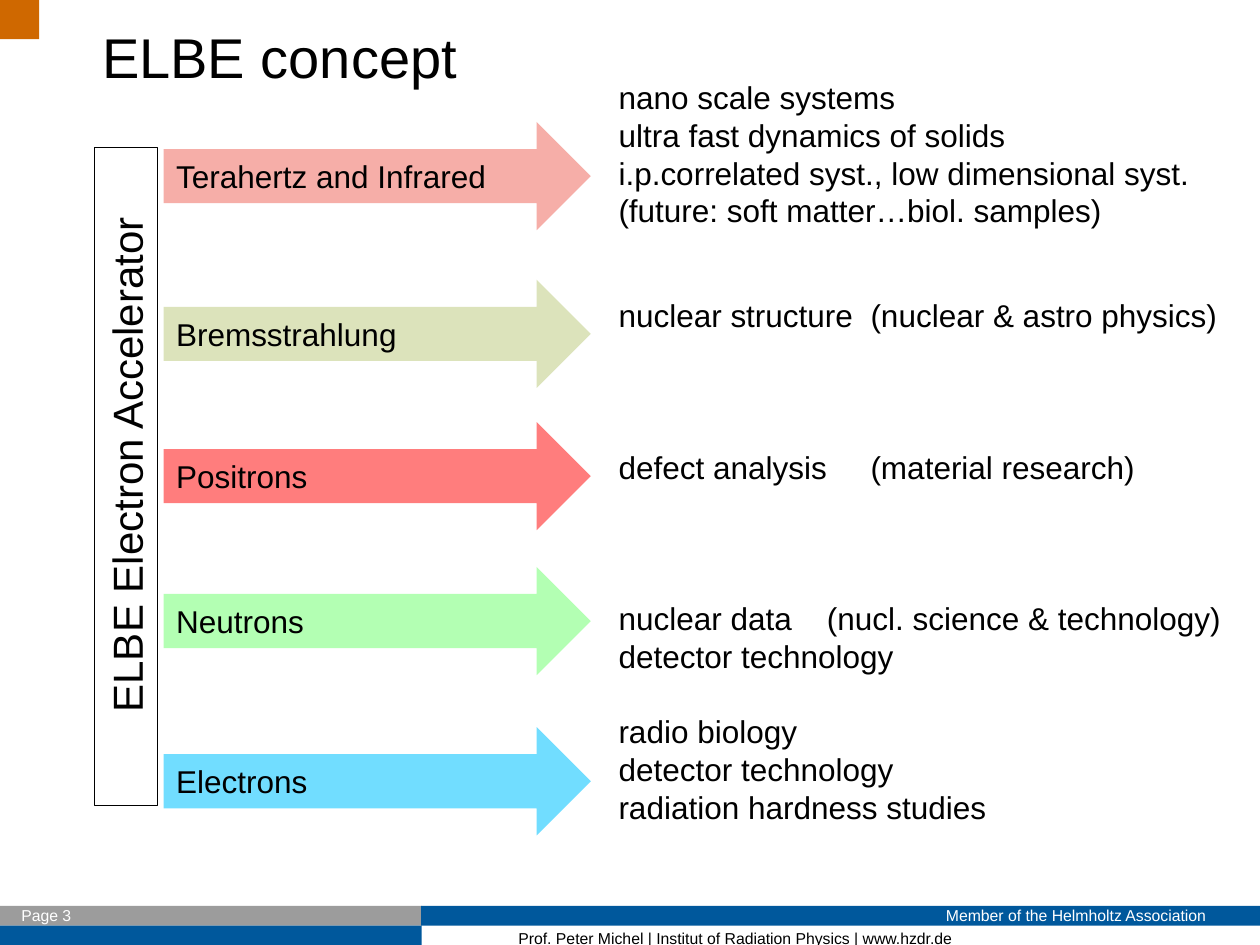
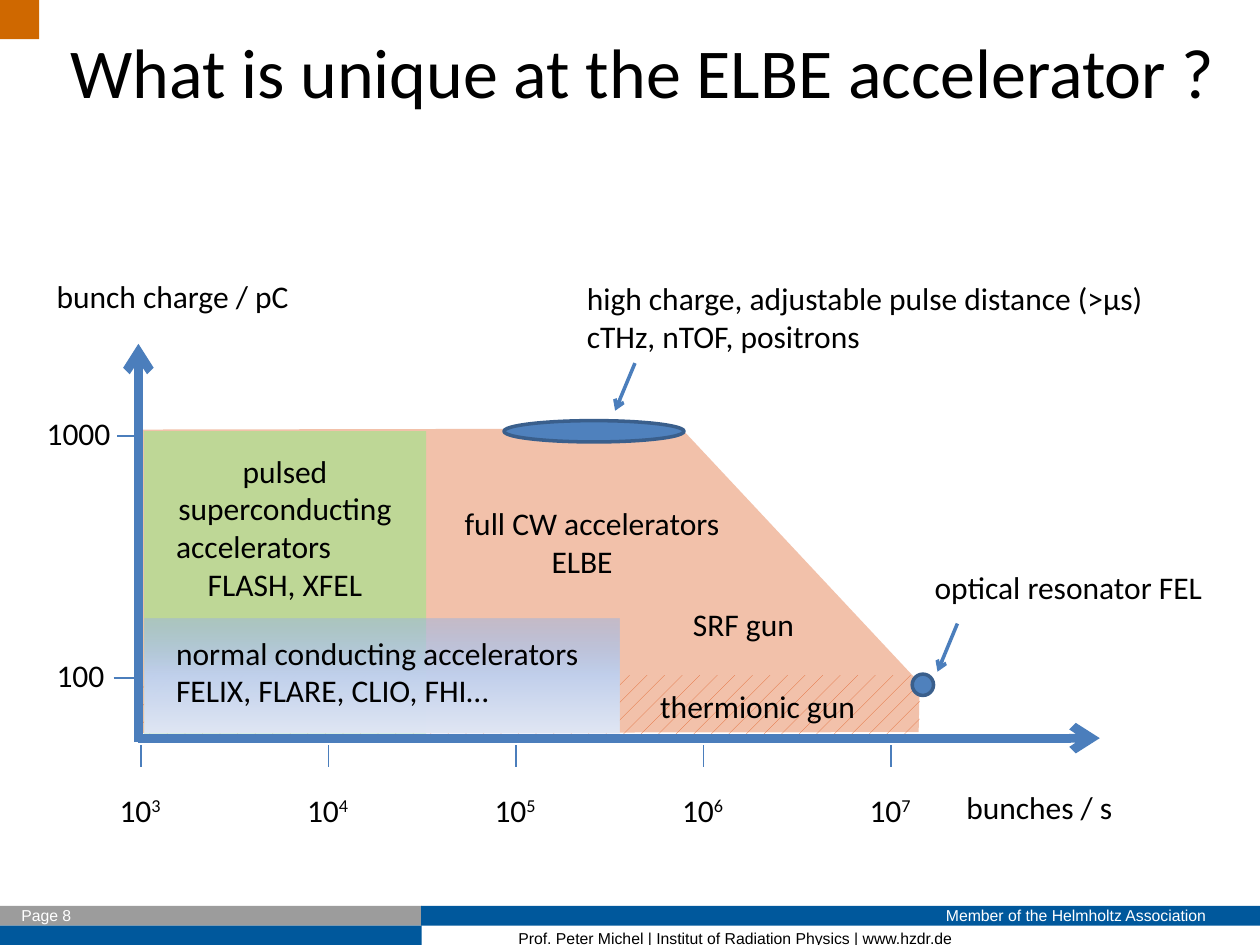
"""Build two slides on the ELBE accelerator: its beams and its operating range."""
from copy import deepcopy

from lxml.etree import SubElement
from pptx import Presentation
from pptx.dml.color import RGBColor
from pptx.enum.dml import MSO_PATTERN_TYPE as Pattern
from pptx.enum.shapes import MSO_CONNECTOR as Connector, MSO_SHAPE as Shape
from pptx.enum.text import MSO_ANCHOR as Anchor, MSO_AUTO_SIZE as AutoSize, PP_ALIGN as Align
from pptx.oxml.ns import qn
from pptx.util import Cm, Pt

ORANGE, GRAY, NAVY = "CF6800", "9C9C9C", "00589C"
BLACK, WHITE = "000000", "FFFFFF"
AXIS_BLUE, SPOT_BLUE, SPOT_EDGE, CW_ORANGE = "4B7EBC", "4F81BD", "3A5F8C", "E0642C"

ARIAL = {"name": "Arial", "size": Pt(18)}
CALIBRI = {"name": "Calibri", "size": Pt(18)}
FOOTER = {"name": "Arial", "size": Pt(9)}
BLANK_LINE = 21.6

BEAMS = [
    ("Terahertz and Infrared", 2.46, "F6AEA8", None),
    ("Bremsstrahlung", 5.64, "DCE3BB", None),
    ("Positrons", 8.51, "FF0000", 51),
    ("Neutrons", 11.43, "B3FFB3", None),
    ("Electrons", 14.66, "71DDFF", None),
]

RESEARCH_TOPICS = [
    "nano scale systems",
    "ultra fast dynamics of solids",
    "i.p.correlated syst., low dimensional syst.",
    "(future: soft matter…biol. samples)",
    ("nuclear structure\t(nuclear & astro physics)", {"space": 38.4, "tab": 5.08}),
    ("defect analysis\t(material research)", {"space": 3 * BLANK_LINE, "tab": 5.08}),
    ("nuclear data\t(nucl. science & technology)", {"space": 3 * BLANK_LINE, "tab": 4.2}),
    "detector technology",
    ("radio biology", {"space": BLANK_LINE}),
    "detector technology",
    "radiation hardness studies",
]


def rgb(color):
    """Turn a hex string into a colour."""
    return RGBColor.from_string(color)


def set_all(target, values):
    """Set each attribute in a dict on the target."""
    for name, value in values.items():
        setattr(target, name, value)


def box(*lengths):
    """Convert centimetres to lengths."""
    return [Cm(length) for length in lengths]


def set_alpha(shape, percent):
    """Set the opacity of the first colour in a shape."""
    color = next(shape._element.spPr.iter(qn("a:srgbClr")))
    SubElement(color, qn("a:alpha"), val=str(percent * 1000))


def format_paragraph(paragraph, space=0, tab=None, indent=0, align=None):
    """Apply spacing, a tab stop, an indent and an alignment."""
    properties = paragraph._p.get_or_add_pPr()
    if tab:
        tabs = SubElement(properties, qn("a:tabLst"))
        SubElement(tabs, qn("a:tab"), pos=str(Cm(tab)), algn="l")
    if indent:
        properties.set("marL", str(Cm(indent)))
    set_all(paragraph, {"space_before": Pt(space), "alignment": align})


def write(shape, lines, font, color=BLACK, align=Align.LEFT, **frame_values):
    """Fill a shape with paragraphs; a caret starts a superscript."""
    frame = shape.text_frame
    set_all(frame, {"word_wrap": True, **frame_values})
    for index, line in enumerate(lines):
        text, options = line if isinstance(line, tuple) else (line, {})
        paragraph = frame.paragraphs[0] if index == 0 else frame.add_paragraph()
        format_paragraph(paragraph, **{"align": align, **options})
        for position, part in enumerate(text.split("^")):
            run = paragraph.add_run()
            run.text = part
            set_all(run.font, font)
            run.font.color.rgb = rgb(color)
            if position:
                run._r.get_or_add_rPr().set("baseline", "30000")


def add_text(slide, place, lines, font, wrap=False, **options):
    """Add a text box."""
    text_box = slide.shapes.add_textbox(*box(*place))
    write(text_box, lines, font, word_wrap=wrap,
          auto_size=AutoSize.SHAPE_TO_FIT_TEXT, **options)


def paint(shape, fill=None, alpha=None, line=None, width=0.75):
    """Set the fill and outline of a shape and drop its shadow."""
    shape.shadow.inherit = False
    if fill:
        shape.fill.solid()
        shape.fill.fore_color.rgb = rgb(fill)
    else:
        shape.fill.background()
    if alpha:
        set_alpha(shape, alpha)
    if line:
        shape.line.color.rgb = rgb(line)
        shape.line.width = Pt(width)
    else:
        shape.line.fill.background()


def add_shape(slide, kind, place, **style):
    """Add a painted preset shape."""
    shape = slide.shapes.add_shape(kind, *box(*place))
    paint(shape, **style)
    return shape


def add_line(slide, ends, width=0.75, arrow=False):
    """Add a straight axis-blue line, with an arrowhead if wanted."""
    line = slide.shapes.add_connector(Connector.STRAIGHT, *box(*ends))
    line.line.color.rgb = rgb(AXIS_BLUE)
    line.line.width = Pt(width)
    if arrow:
        SubElement(line.line._get_or_add_ln(), qn("a:tailEnd"), type="arrow")
    SubElement(line._element.spPr, qn("a:effectLst"))


def add_frame(slide, page):
    """Draw the corner mark, footer bands and footer texts."""
    for place, color in [
        ((0, 0, 0.79, 0.79), ORANGE),
        ((0, 18.26, 8.5, 0.4), GRAY),
        ((8.49, 18.26, 16.91, 0.4), NAVY),
        ((0, 18.66, 8.5, 0.4), NAVY),
    ]:
        add_shape(slide, Shape.RECTANGLE, place, fill=color)
    add_text(slide, (18.21, 18.13, 6.35, 0.64), ["Member of the Helmholtz Association"],
             FOOTER, wrap=True, color=WHITE, align=Align.RIGHT)
    add_text(slide, (0.18, 18.13, 5.92, 0.64), [f"Page {page}"],
             FOOTER, wrap=True, color=WHITE)
    add_text(slide, (10.2, 18.6, 14.92, 0.64),
             ["Prof. Peter Michel | Institut of Radiation Physics | www.hzdr.de"],
             FOOTER, wrap=True)


def add_slide(presentation, page):
    """Add a blank slide with the shared frame."""
    slide = presentation.slides.add_slide(presentation.slide_layouts[6])
    add_frame(slide, page)
    return slide


def add_beam_arrow(slide, label, top, color, alpha):
    """Add a block arrow that names one kind of beam."""
    arrow = add_shape(slide, Shape.RIGHT_ARROW, (3.3, top, 8.61, 2.18),
                      fill=color, alpha=alpha)
    write(arrow, [label], ARIAL)


def add_cw_region(slide):
    """Add the outlined region of the continuous wave accelerators."""
    hatch = add_shape(slide, Shape.RECTANGLE, (2.79, 13.61, 15.75, 1.19))
    hatch.fill.patterned()
    hatch.fill.pattern = Pattern.PERCENT_5
    hatch.fill.fore_color.rgb = rgb(CW_ORANGE)
    hatch.fill.back_color.rgb = rgb(WHITE)

    corners = [(18.52, 14.76), (18.54, 13.77), (13.74, 8.64), (2.84, 8.66), (2.79, 14.78)]
    start, *others = [box(*corner) for corner in corners]
    builder = slide.shapes.build_freeform(*start, scale=1.0)
    builder.add_line_segments(others, close=True)
    region = builder.convert_to_shape()
    paint(region, CW_ORANGE, 40)
    write(region, [("full CW accelerators", {"indent": 2.54}), ("ELBE", {"indent": 2.14})],
          CALIBRI, align=Align.CENTER, vertical_anchor=Anchor.MIDDLE, margin_bottom=Cm(1.68))
    add_text(slide, (13.72, 12.07, 2.57, 1.02), ["SRF gun"], CALIBRI)
    add_text(slide, (13.06, 13.72, 4.5, 1.02), ["thermionic gun"], CALIBRI)


def add_pulsed_region(slide):
    """Add the region of the pulsed superconducting accelerators."""
    region = add_shape(slide, Shape.RECTANGLE, (2.9, 8.69, 5.69, 6.2),
                       fill="88EF83", alpha=49)
    lines = ["pulsed superconducting",
             ("accelerators", {"align": Align.LEFT, "indent": 0.4}),
             "FLASH, XFEL"]
    write(region, lines, CALIBRI, align=Align.CENTER,
          vertical_anchor=Anchor.MIDDLE, margin_bottom=Cm(2.45))


def add_axes(slide):
    """Draw both axes with their ticks and labels."""
    add_line(slide, (2.79, 14.88, 22.17, 14.88), 5, True)
    add_line(slide, (2.79, 14.96, 2.79, 6.93), 5, True)
    add_text(slide, (19.23, 15.77, 6.76, 1.02), ["bunches / s"], CALIBRI, wrap=True)
    add_text(slide, (0.89, 5.46, 5.41, 1.02), ["bunch charge / pC"], CALIBRI)
    for label, left, width, tick_left, tick_top in [
        ("1000", 0.69, 1.8, 2.36, 8.79),
        ("100", 0.89, 1.5, 2.29, 13.67),
    ]:
        add_text(slide, (left, tick_top - 0.56, width, 1.02), [label], CALIBRI)
        add_line(slide, (tick_left, tick_top, tick_left + 0.43, tick_top))
    for step in range(5):
        center = 2.84 + 3.78 * step
        add_line(slide, (center, 15.02, center, 15.46))
        add_text(slide, (center - 0.68, 15.82, 1.37, 1.02), [f"10^{step + 3}"], CALIBRI)


def add_spot(slide, place, label_place, lines, pointer):
    """Add an operating point with its label and pointer."""
    add_shape(slide, Shape.OVAL, place, fill=SPOT_BLUE, line=SPOT_EDGE, width=2)
    add_text(slide, label_place, lines, CALIBRI)
    add_line(slide, pointer, 2, True)


def add_normal_region(slide):
    """Add the shaded region of the normal conducting accelerators."""
    region = add_shape(slide, Shape.RECTANGLE, (2.92, 12.47, 9.58, 2.31))
    region.fill.gradient()
    region.fill.gradient_angle = 270
    stops = region._element.spPr.find(".//" + qn("a:gsLst"))
    stops.insert(1, deepcopy(stops[1]))
    for stop, position, color in zip(region.fill.gradient_stops, (0, 0.5, 1),
                                     ("9AB5E4", "C2D1ED", "E1E8F5")):
        stop.position = position
        stop.color.rgb = rgb(color)
    set_alpha(region, 50)
    add_text(slide, (3.3, 12.65, 8.69, 1.8),
             ["normal conducting accelerators", "FELIX, FLARE, CLIO, FHI…"], CALIBRI)


def add_concept_slide(presentation):
    """Show the beams of the accelerator and their uses."""
    slide = add_slide(presentation, 3)
    add_text(slide, (12.22, 1.45, 12.78, 15.47), RESEARCH_TOPICS, ARIAL, wrap=True)
    for beam in BEAMS:
        add_beam_arrow(slide, *beam)
    accelerator = add_shape(slide, Shape.RECTANGLE, (-4.09, 8.97, 13.26, 1.27), line=BLACK)
    accelerator.rotation = 270
    write(accelerator, ["ELBE Electron Accelerator"], {**ARIAL, "size": Pt(24)},
          align=Align.CENTER, margin_left=Cm(0.72))
    add_text(slide, (1.5, 0.33, 22.78, 1.63), ["ELBE concept"],
             {**ARIAL, "size": Pt(32)}, wrap=True, margin_left=Cm(0.56))


def add_range_slide(presentation):
    """Show the bunch charge and bunch rate that accelerators reach."""
    slide = add_slide(presentation, 8)
    add_cw_region(slide)
    add_pulsed_region(slide)
    add_axes(slide)
    add_spot(slide, (18.39, 13.59, 0.43, 0.43), (18.59, 11.33, 5.97, 1.02),
             ["optical resonator FEL"], (19.3, 12.57, 18.9, 13.54))
    add_spot(slide, (10.16, 8.48, 3.63, 0.43), (11.58, 5.51, 12.14, 1.8),
             ["high charge, adjustable pulse distance (>µs)", "cTHz, nTOF, positrons"],
             (12.8, 7.32, 12.4, 8.28))
    add_text(slide, (1.17, 0.46, 23.8, 1.96), ["What is unique at the ELBE accelerator ?"],
             {**CALIBRI, "size": Pt(40)})
    add_normal_region(slide)


def main():
    """Build and save the presentation."""
    presentation = Presentation()
    set_all(presentation, {"slide_width": Cm(25.4), "slide_height": Cm(19.05)})
    add_concept_slide(presentation)
    add_range_slide(presentation)
    presentation.save("out.pptx")


if __name__ == "__main__":
    main()
